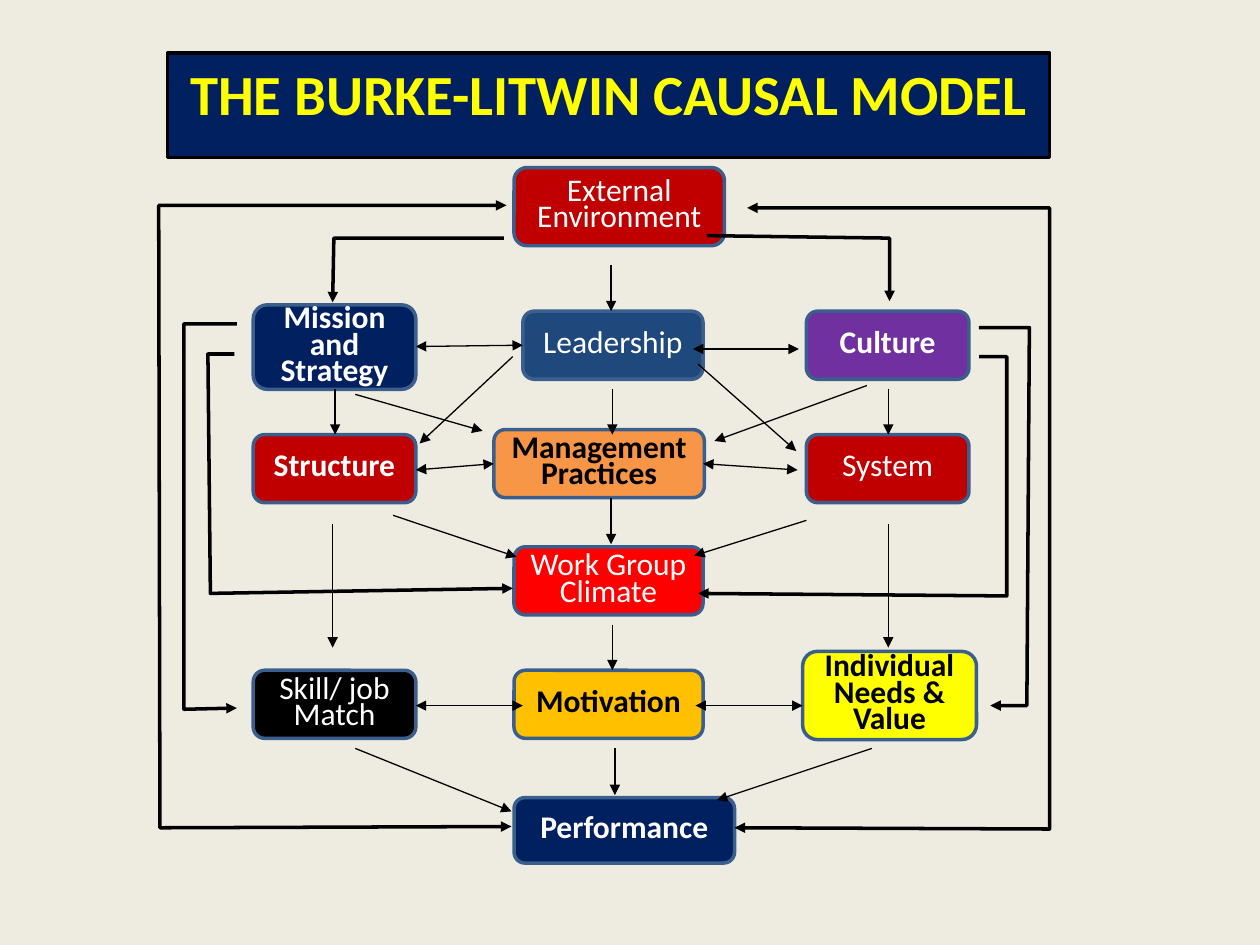
import lxml.etree
import pptx
import pptx.chart.data
import pptx.dml.color
import pptx.enum.shapes
import pptx.enum.text
import pptx.oxml.ns
import pptx.util

Inches = pptx.util.Inches
SHAPE = pptx.enum.shapes.MSO_SHAPE
ANCHOR = pptx.enum.text.MSO_ANCHOR

TITLE_BOX = (1.33, 0.42, 7, 0.83)
MODEL_BOX = (1.25, 1.25, 7.1, 5.6)

NODES = [
    ("Management Practices", 2.67, 2.16, 1.67, 0.54, "F79646", "000000", True),
    ("Leadership", 2.9, 1.22, 1.43, 0.54, "1F497D", "FFFFFF", False),
    ("External Environment", 2.83, 0.08, 1.67, 0.62, "C00000", "FFFFFF", False),
    ("Work Group Climate", 2.83, 3.09, 1.5, 0.54, "FF0000", "FFFFFF", False),
    ("Motivation", 2.83, 4.07, 1.5, 0.54, "FFC000", "000000", True),
    ("Skill/ job Match", 0.76, 4.07, 1.29, 0.54, "000000", "FFFFFF", False),
    ("Structure", 0.76, 2.2, 1.29, 0.54, "C00000", "FFFFFF", True),
    ("Mission and Strategy", 0.76, 1.17, 1.29, 0.67, "002060", "FFFFFF", True),
    ("System", 5.15, 2.2, 1.29, 0.54, "C00000", "FFFFFF", False),
    ("Individual Needs & Value", 5.12, 3.92, 1.38, 0.7, "FFFF00", "000000", True),
    ("Culture", 5.15, 1.22, 1.29, 0.54, "7030A0", "FFFFFF", True),
    ("Performance", 2.83, 5.08, 1.75, 0.52, "002060", "FFFFFF", True),
]

FEEDBACK_LOOPS = [
    [(4.58, 5.32), (7.08, 5.33), (7.08, 0.4), (4.68, 0.4)],
    [(2.77, 0.38), (0.01, 0.38), (0.02, 5.32), (2.81, 5.31)],
]

ELBOWS = [
    [(2.75, 0.64), (1.4, 0.64), (1.39, 1.15)],
    [(4.36, 0.62), (5.81, 0.64), (5.81, 1.14)],
    [(6.52, 1.35), (6.92, 1.35), (6.9, 4.35), (6.61, 4.35)],
    [(6.52, 1.58), (6.74, 1.58), (6.74, 3.48), (4.29, 3.46)],
    [(0.63, 1.32), (0.21, 1.32), (0.21, 4.38), (0.63, 4.37)],
    [(0.61, 1.56), (0.4, 1.56), (0.42, 3.46), (2.82, 3.42)],
]

DOWN_ARROWS = [
    (1.41, 1.84, 0.36), (3.63, 4.69, 0.37), (3.6, 0.85, 0.37),
    (3.61, 3.71, 0.36), (3.6, 2.7, 0.37), (3.61, 1.84, 0.36),
    (5.8, 1.84, 0.36), (1.39, 2.91, 0.98), (5.8, 2.91, 0.98),
]

DIAGONALS = [
    (5.67, 4.69, 4.44, 5.1), (1.57, 4.69, 2.81, 5.19),
    (5.15, 2.88, 4.26, 3.16), (1.87, 2.84, 2.85, 3.17),
    (5.63, 1.81, 4.42, 2.25), (1.57, 1.88, 2.58, 2.17),
    (2.82, 1.58, 2.08, 2.27), (4.29, 1.64, 5.07, 2.33),
]

TWO_WAY = [
    (2.05, 1.5, 2.9, 1.49), (4.33, 2.43, 5.08, 2.48),
    (2.05, 2.48, 2.67, 2.43), (4.25, 1.52, 5.09, 1.52),
    (2.05, 4.35, 2.9, 4.35), (4.27, 4.35, 5.12, 4.35),
]


def rgb(value):
    """Return the colour for a hex string."""
    return pptx.dml.color.RGBColor.from_string(value)


def add_box(s, kind, box, text, fill, line, color, size, bold):
    """Add a filled, outlined box with centred text and return it."""
    sp = s.shapes.add_shape(kind, *map(Inches, box))
    sp.shadow.inherit = False
    sp.fill.solid()
    sp.fill.fore_color.rgb = rgb(fill)
    sp.line.color.rgb = rgb(line)
    sp.line.width = pptx.util.Pt(2)
    tf = sp.text_frame
    tf.word_wrap = True
    p = tf.paragraphs[0]
    p.alignment = pptx.enum.text.PP_ALIGN.CENTER
    r = p.add_run()
    r.text = text
    r.font.name = "Calibri"
    r.font.size = pptx.util.Pt(size)
    r.font.bold = bold
    r.font.color.rgb = rgb(color)
    return sp


def style_arrow(sp, width, both):
    """Draw the line in black with a triangle at the end, or at both ends."""
    sp.line.color.rgb = rgb("000000")
    sp.line.width = pptx.util.Pt(width)
    ln = sp.line._get_or_add_ln()
    for tag in ("a:headEnd", "a:tailEnd") if both else ("a:tailEnd",):
        lxml.etree.SubElement(ln, pptx.oxml.ns.qn(tag), type="triangle")


def add_arrow(s, box, x1, y1, x2, y2, both=False):
    """Add a thin straight arrow inside the box."""
    left, top = box[:2]
    ends = (left + x1, top + y1, left + x2, top + y2)
    sp = s.shapes.add_connector(
        pptx.enum.shapes.MSO_CONNECTOR.STRAIGHT, *map(Inches, ends))
    style_arrow(sp, 0.75, both)
    lxml.etree.SubElement(sp._element.spPr, pptx.oxml.ns.qn("a:effectLst"))


def add_elbow(s, box, points, both=False):
    """Add a thick bent arrow inside the box."""
    left, top = box[:2]
    pts = [(Inches(left + x), Inches(top + y)) for x, y in points]
    builder = s.shapes.build_freeform(*pts[0])
    builder.add_line_segments(pts[1:], close=False)
    sp = builder.convert_to_shape()
    sp.shadow.inherit = False
    sp.fill.background()
    style_arrow(sp, 2, both)


def add_title(s, box):
    """Add the title bar."""
    sp = add_box(s, SHAPE.RECTANGLE, box, "THE BURKE-LITWIN CAUSAL MODEL",
                 "002060", "000000", "FFFF00", 32.4, True)
    sp.text_frame.vertical_anchor = ANCHOR.TOP


def add_model(s, box):
    """Add the nodes of the model and the arrows between them."""
    left, top = box[:2]
    for text, x, y, w, h, fill, color, bold in NODES:
        sp = add_box(s, SHAPE.ROUNDED_RECTANGLE, (left + x, top + y, w, h),
                     text, fill, "3A5F8C", color, 18, bold)
        sp.text_frame.vertical_anchor = ANCHOR.MIDDLE
        sp.text_frame.paragraphs[0].line_spacing = 0.7
    for points in FEEDBACK_LOOPS:
        add_elbow(s, box, points, both=True)
    for points in ELBOWS:
        add_elbow(s, box, points)
    for x, y, length in DOWN_ARROWS:
        add_arrow(s, box, x, y, x, y + length)
    for ends in DIAGONALS:
        add_arrow(s, box, *ends)
    for ends in TWO_WAY:
        add_arrow(s, box, *ends, both=True)


def main():
    """Build the slide and save it."""
    prs = pptx.Presentation()
    prs.slide_width, prs.slide_height = Inches(10), Inches(7.5)
    s = prs.slides.add_slide(prs.slide_layouts[6])
    s.background.fill.solid()
    s.background.fill.fore_color.rgb = rgb("EEECE1")
    add_title(s, TITLE_BOX)
    add_model(s, MODEL_BOX)
    prs.save("out.pptx")


if __name__ == "__main__":
    main()
